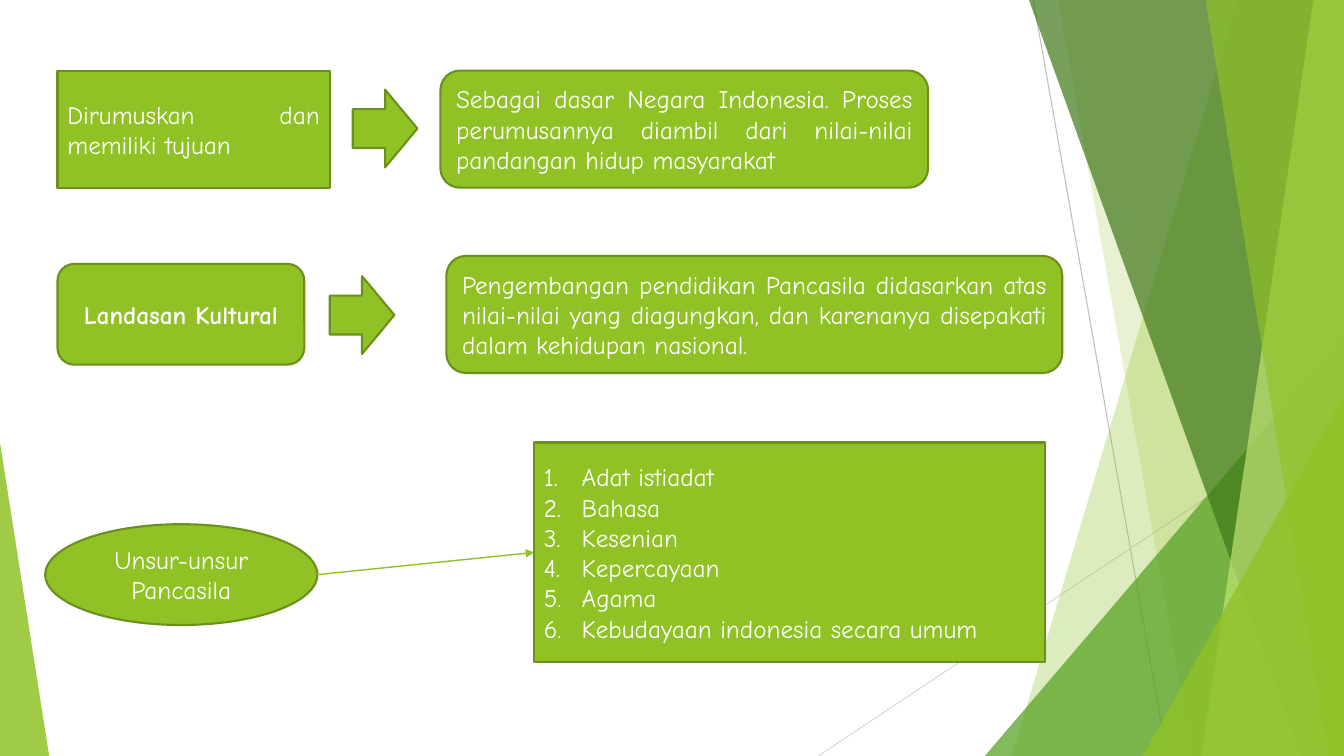
from dataclasses import dataclass

from lxml import etree
from pptx import Presentation
from pptx.dml.color import RGBColor
from pptx.enum.shapes import MSO_CONNECTOR, MSO_SHAPE
from pptx.enum.text import MSO_ANCHOR, PP_ALIGN
from pptx.oxml.ns import qn
from pptx.util import Cm, Pt

RECT, ROUNDED = MSO_SHAPE.RECTANGLE, MSO_SHAPE.ROUNDED_RECTANGLE
ELLIPSE, ARROW = MSO_SHAPE.OVAL, MSO_SHAPE.RIGHT_ARROW
TRIANGLE, STRAIGHT = MSO_SHAPE.ISOSCELES_TRIANGLE, MSO_CONNECTOR.STRAIGHT
JUSTIFY, CENTER = PP_ALIGN.JUSTIFY, PP_ALIGN.CENTER
MIDDLE = MSO_ANCHOR.MIDDLE
LEFT_SIDE = 1


@dataclass(frozen=True)
class Theme:
    green: str = "90C226"
    outline: str = "6B901C"
    leaf: str = "54A021"
    forest: str = "3F7819"
    lime: str = "C0E474"
    gray: str = "BFBFBF"
    light_gray: str = "D9D9D9"
    white: str = "FFFFFF"
    font: str = "Comic Neue"
    text_size: float = 18
    box_line: float = 1.5
    link_line: float = 1
    hairline: float = 0.75


THEME = Theme()
WIDTH, HEIGHT = 33.87, 19.05
ROW_HEIGHT = 2.95
LABEL_HEIGHT = 2.54

# Top-left x, bottom-left x, colour, opacity; every facet reaches the right edge.
BACK_FACETS = [
    (31.19, 25.5, THEME.green, 30),
    (26.67, 30.05, THEME.green, 20),
]
FRONT_FACETS = [
    (25.93, 32.79, THEME.forest, 70),
    (33.1, 30.28, THEME.lime, 70),
    (30.38, 33.48, THEME.green, 65),
]
ELEMENTS = [
    "Adat istiadat",
    "Bahasa",
    "Kesenian",
    "Kepercayaan",
    "Agama",
    "Kebudayaan indonesia secara umum",
]


def paint_translucent(shape, color, opacity):
    shape.shadow.inherit = False
    shape.fill.solid()
    shape.fill.fore_color.rgb = RGBColor.from_string(color)
    shape.line.fill.background()
    fill_color = shape._element.spPr.find(".//" + qn("a:srgbClr"))
    etree.SubElement(fill_color, qn("a:alpha"), val=str(opacity * 1000))


def add_facet(slide, top_x, bottom_x, color, opacity):
    builder = slide.shapes.build_freeform(Cm(top_x), Cm(0))
    builder.add_line_segments(
        [(Cm(x), Cm(y)) for x, y in ((WIDTH, 0), (WIDTH, HEIGHT), (bottom_x, HEIGHT))]
    )
    paint_translucent(builder.convert_to_shape(), color, opacity)


def add_corner(slide, left, top, right, apex, color, opacity):
    """Add a triangle standing on the slide's bottom edge, apex 0 left to 1 right."""
    corner = slide.shapes.add_shape(
        TRIANGLE, Cm(left), Cm(top), Cm(right - left), Cm(HEIGHT - top)
    )
    corner.adjustments[0] = apex
    paint_translucent(corner, color, opacity)


def add_line(slide, start, end, color, width):
    line = slide.shapes.add_connector(STRAIGHT, *(Cm(v) for v in (*start, *end)))
    line.line.color.rgb = RGBColor.from_string(color)
    line.line.width = Pt(width)
    etree.SubElement(line._element.spPr, qn("a:effectLst"))
    return line


def add_arrow_link(slide, start, target):
    link = add_line(slide, start, start, THEME.green, THEME.link_line)
    link.end_connect(target, LEFT_SIDE)
    outline = link._element.spPr.find(qn("a:ln"))
    etree.SubElement(outline, qn("a:tailEnd"), type="triangle")


def number_paragraph(paragraph):
    indent = Cm(0.95)
    properties = paragraph._p.get_or_add_pPr()
    properties.set("marL", str(indent))
    properties.set("indent", str(-indent))
    etree.SubElement(properties, qn("a:buFont"), typeface="+mj-lt")
    etree.SubElement(properties, qn("a:buAutoNum"), type="arabicPeriod")


def write_text(box, lines, align, bold, numbered):
    frame = box.text_frame
    frame.word_wrap = True
    frame.vertical_anchor = MIDDLE
    frame.text = "\n".join(lines)
    for paragraph in frame.paragraphs:
        paragraph.alignment = align
        if numbered:
            number_paragraph(paragraph)
        font = paragraph.font
        font.name, font.size, font.bold = THEME.font, Pt(THEME.text_size), bold
        font.color.rgb = RGBColor.from_string(THEME.white)


def add_box(slide, kind, left, top, width, height, lines=(), align=JUSTIFY,
            bold=False, numbered=False):
    box = slide.shapes.add_shape(kind, Cm(left), Cm(top), Cm(width), Cm(height))
    box.shadow.inherit = False
    box.fill.solid()
    box.fill.fore_color.rgb = RGBColor.from_string(THEME.green)
    box.line.color.rgb = RGBColor.from_string(THEME.outline)
    box.line.width = Pt(THEME.box_line)
    if lines:
        write_text(box, lines, align, bold, numbered)
    return box


def add_block_arrow(slide, left, top):
    add_box(slide, ARROW, left, top, 1.63, 1.96)


def add_backdrop(slide):
    add_line(slide, (26.04, 0), (29.41, HEIGHT), THEME.gray, THEME.hairline)
    add_line(slide, (WIDTH, 10.24), (20.62, HEIGHT), THEME.light_gray, THEME.hairline)
    for facet in BACK_FACETS:
        add_facet(slide, *facet)
    add_corner(slide, 24.82, 8.46, WIDTH, 1, THEME.leaf, 72)
    for facet in FRONT_FACETS:
        add_facet(slide, *facet)
    add_corner(slide, 28.8, 9.98, WIDTH, 1, THEME.green, 80)
    add_corner(slide, 0, 11.15, 1.24, 0, THEME.green, 85)


def add_purpose_row(slide):
    add_box(slide, RECT, 1.45, 1.78, 6.86, ROW_HEIGHT, ["Dirumuskan dan memiliki tujuan"])
    add_box(slide, ROUNDED, 11.1, 1.78, 12.29, ROW_HEIGHT, [
        "Sebagai dasar Negara Indonesia. Proses perumusannya diambil dari "
        "nilai-nilai pandangan hidup masyarakat"
    ])
    add_block_arrow(slide, 8.89, 2.26)


def add_culture_row(slide):
    add_box(slide, ROUNDED, 1.45, 6.65, 6.22, LABEL_HEIGHT, ["Landasan Kultural"],
            CENTER, bold=True)
    add_block_arrow(slide, 8.31, 6.96)
    add_box(slide, ROUNDED, 11.25, 6.45, 15.52, ROW_HEIGHT, [
        "Pengembangan pendidikan Pancasila didasarkan atas nilai-nilai yang "
        "diagungkan, dan karenanya disepakati dalam kehidupan nasional."
    ])


def add_elements_row(slide):
    left, top, width = 1.14, 13.21, 6.86
    add_box(slide, ELLIPSE, left, top, width, LABEL_HEIGHT, ["Unsur-unsur Pancasila"], CENTER)
    elements = add_box(slide, RECT, 13.46, 11.15, 12.88, 5.54, ELEMENTS, numbered=True)
    add_arrow_link(slide, (left + width, top + LABEL_HEIGHT / 2), elements)


def main():
    presentation = Presentation()
    presentation.slide_width, presentation.slide_height = Cm(WIDTH), Cm(HEIGHT)
    slide = presentation.slides.add_slide(presentation.slide_layouts[6])
    add_backdrop(slide)
    add_purpose_row(slide)
    add_culture_row(slide)
    add_elements_row(slide)
    presentation.save("out.pptx")


if __name__ == "__main__":
    main()
